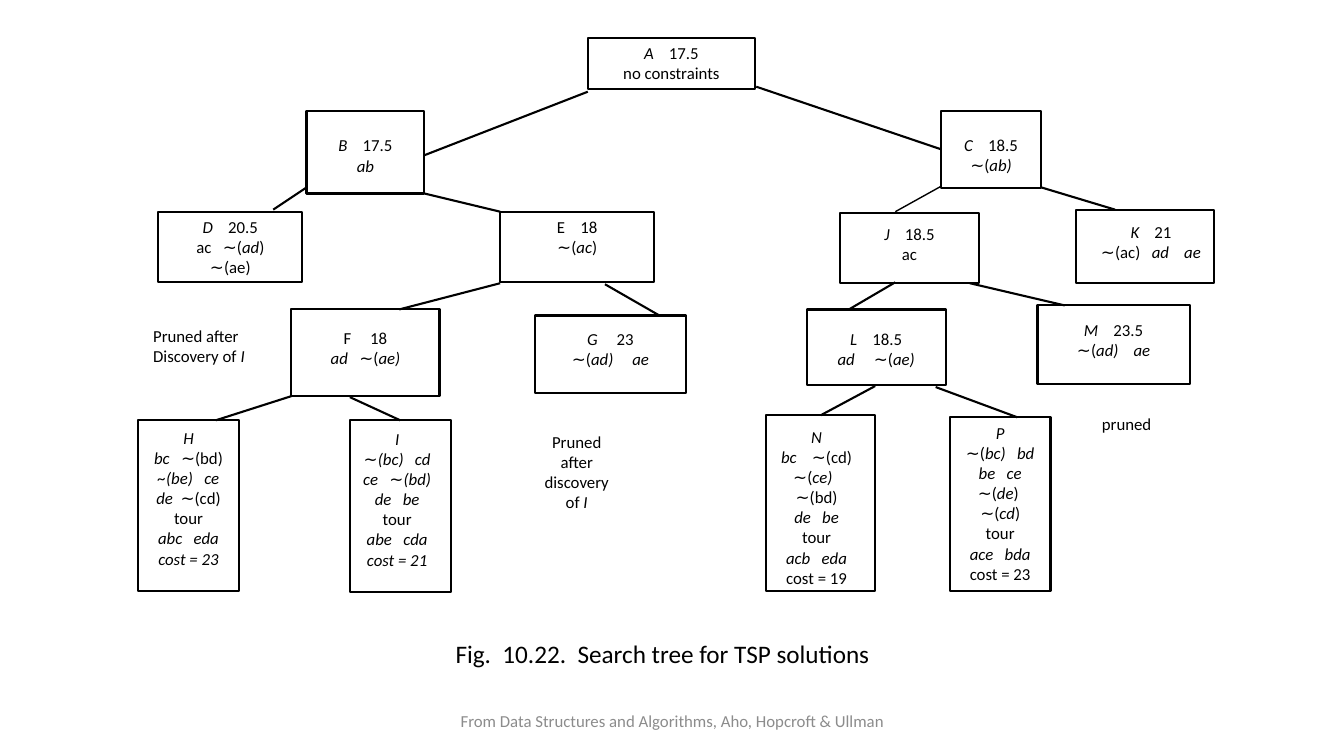
from dataclasses import dataclass

from lxml import etree
from pptx import Presentation
from pptx.dml.color import RGBColor
from pptx.enum.shapes import MSO_CONNECTOR, MSO_SHAPE
from pptx.enum.text import MSO_ANCHOR, PP_ALIGN
from pptx.oxml.ns import qn
from pptx.util import Inches, Pt

RECT = MSO_SHAPE.RECTANGLE
STRAIGHT = MSO_CONNECTOR.STRAIGHT
TOP, MIDDLE = MSO_ANCHOR.TOP, MSO_ANCHOR.MIDDLE
LEFT, CENTER = PP_ALIGN.LEFT, PP_ALIGN.CENTER


@dataclass(frozen=True)
class Theme:
    font: str = "Calibri"
    ink: RGBColor = RGBColor(0, 0, 0)
    muted: RGBColor = RGBColor(0x8C, 0x8C, 0x8C)
    body: float = 12
    caption: float = 18
    line: float = 1.5
    thin: float = 1
    side_pad: float = 0.1


@dataclass(frozen=True)
class Node:
    """A boxed tree node; underscores in its lines enclose italics."""
    x: float
    y: float
    w: float
    h: float
    lines: tuple[str, ...]
    top_pad: float = 0.05
    shift: float = 0


@dataclass(frozen=True)
class Edge:
    x1: float
    y1: float
    x2: float
    y2: float
    width: float = 1.5


@dataclass(frozen=True)
class Note:
    x: float
    y: float
    w: float
    h: float
    lines: tuple[str, ...]
    align: PP_ALIGN = LEFT
    anchor: MSO_ANCHOR = TOP
    size: float = 12
    color: RGBColor = RGBColor(0, 0, 0)


THEME = Theme()

NODES = [
    # Root and first branching
    Node(5.83, 0.38, 1.66, 0.5, ("_A_    17.5", "no constraints"), 0.04),
    Node(3.04, 1.1, 1.17, 0.82, ("_B_    17.5", "_ab_"), 0.24),
    Node(9.33, 1.1, 1, 0.77, ("_C_    18.5", "∼(_ab)_"), 0.24),
    # Second level
    Node(1.57, 2.1, 1.43, 0.7, ("_D_    20.5", "ac   ∼(_ad_)", "∼(ae)")),
    Node(4.96, 2.1, 1.53, 0.7, ("E    18", "∼(_ac_)")),
    Node(8.33, 2.11, 1.38, 0.7, ("_J_    18.5", "ac"), 0.11),
    Node(10.67, 2.08, 1.37, 0.73, ("_K_    21", "∼(ac)   _ad    ae_"), 0.12, 0.06),
    # Third level
    Node(2.89, 3.07, 1.47, 0.86, ("F     18", "_ad_   ∼(_ae)_"), 0.18),
    Node(5.31, 3.13, 1.49, 0.77, ("_G_     23", "∼(_ad)     ae_"), 0.13),
    Node(8, 3.07, 1.38, 0.75, ("_L_    18.5", "_ad_     ∼(_ae)_"), 0.19),
    Node(10.29, 3.03, 1.51, 0.78, ("_M_    23.5", "∼(_ad)    ae_"), 0.14),
    # Leaves with complete tours
    Node(1.37, 4.17, 1, 1.69,
         ("_H_", "_bc_   ∼(bd)", "_~(be)   ce_", "_de_  ∼(cd)",
          "tour", "_abc   eda_", "_cost = 23_"), 0.07),
    Node(3.47, 4.17, 1, 1.7,
         ("_I_", "∼_(bc)   cd_", "_ce   ∼(bd)_", "_de   be_",
          "tour", "_abe   cda_", "_cost = 21_"), 0.08, -0.03),
    Node(7.6, 4.12, 1.08, 1.74,
         ("_N_", "_bc_    ∼(cd)", "∼(_ce)_   ∼(bd)", "_de   be_",
          "tour", "_acb   eda_", "cost = 19"), 0.11, -0.04),
    Node(9.42, 4.14, 1, 1.72,
         ("_P_", "∼(_bc)   bd_", "_be   ce_", "∼(_de_)  ∼(_cd_)",
          "tour", "_ace   bda_", "cost = 23")),
]

EDGES = [
    Edge(5.83, 0.91, 4.21, 1.54), Edge(7.5, 0.86, 9.33, 1.48),      # from A
    Edge(3.04, 1.86, 2.71, 2.08), Edge(4.21, 1.92, 4.96, 2.1),      # from B
    Edge(9.33, 1.85, 8.88, 2.1, THEME.thin), Edge(10.33, 1.86, 11.06, 2.08),  # from C
    Edge(4.96, 2.81, 3.96, 3.07), Edge(6, 2.82, 6.54, 3.13),        # from E
    Edge(8.88, 2.8, 8.42, 3.07), Edge(9.62, 2.81, 10.56, 3.03),     # from J
    Edge(2.89, 3.93, 2.14, 4.17), Edge(3.47, 3.94, 3.97, 4.17),     # from F
    Edge(8.68, 3.83, 8.14, 4.12), Edge(9.28, 3.84, 10.09, 4.14),    # from L
]

NOTES = [
    Note(1.42, 3.18, 1.15, 0.59, ("Pruned after", "Discovery of _I_")),
    Note(5.26, 4.23, 0.92, 0.91, ("Pruned after discovery of _I_",), CENTER),
    Note(10.83, 4.06, 0.69, 0.3, ("pruned",)),
    Note(4.42, 6.28, 4.74, 0.4, ("Fig.  10.22.  Search tree for TSP solutions",),
         size=THEME.caption),
    Note(4.42, 6.95, 4.5, 0.4,
         ("From Data Structures and Algorithms, Aho, Hopcroft & Ullman",),
         CENTER, MIDDLE, color=THEME.muted),
]


def write_lines(tf, lines: tuple[str, ...], align: PP_ALIGN, size: float, color: RGBColor) -> None:
    tf.word_wrap = True
    for i, line in enumerate(lines):
        p = tf.paragraphs[0] if i == 0 else tf.add_paragraph()
        p.alignment = align
        for j, part in enumerate(line.split("_")):
            if not part:
                continue
            r = p.add_run()
            r.text = part
            r.font.name = THEME.font
            r.font.size = Pt(size)
            r.font.italic = j % 2 == 1
            r.font.color.rgb = color


def draw_node(s, node: Node) -> None:
    sp = s.shapes.add_shape(RECT, Inches(node.x), Inches(node.y), Inches(node.w), Inches(node.h))
    sp.shadow.inherit = False
    sp.fill.background()
    sp.line.color.rgb = THEME.ink
    sp.line.width = Pt(THEME.line)
    tf = sp.text_frame
    tf.vertical_anchor = TOP
    tf.margin_top = Inches(node.top_pad)
    tf.margin_bottom = 0
    tf.margin_left = Inches(THEME.side_pad + max(0, 2 * node.shift))
    tf.margin_right = Inches(THEME.side_pad + max(0, -2 * node.shift))
    write_lines(tf, node.lines, CENTER, THEME.body, THEME.ink)


def draw_edge(s, edge: Edge) -> None:
    c = s.shapes.add_connector(STRAIGHT, Inches(edge.x1), Inches(edge.y1),
                               Inches(edge.x2), Inches(edge.y2))
    c.line.color.rgb = THEME.ink
    c.line.width = Pt(edge.width)
    etree.SubElement(c._element.spPr, qn("a:effectLst"))


def draw_note(s, note: Note) -> None:
    sp = s.shapes.add_textbox(Inches(note.x), Inches(note.y), Inches(note.w), Inches(note.h))
    sp.text_frame.vertical_anchor = note.anchor
    write_lines(sp.text_frame, note.lines, note.align, note.size, note.color)


def main() -> None:
    prs = Presentation()
    prs.slide_width, prs.slide_height = Inches(13.33), Inches(7.5)
    s = prs.slides.add_slide(prs.slide_layouts[6])
    for edge in EDGES:
        draw_edge(s, edge)
    for node in NODES:
        draw_node(s, node)
    for note in NOTES:
        draw_note(s, note)
    prs.save("out.pptx")


if __name__ == "__main__":
    main()
